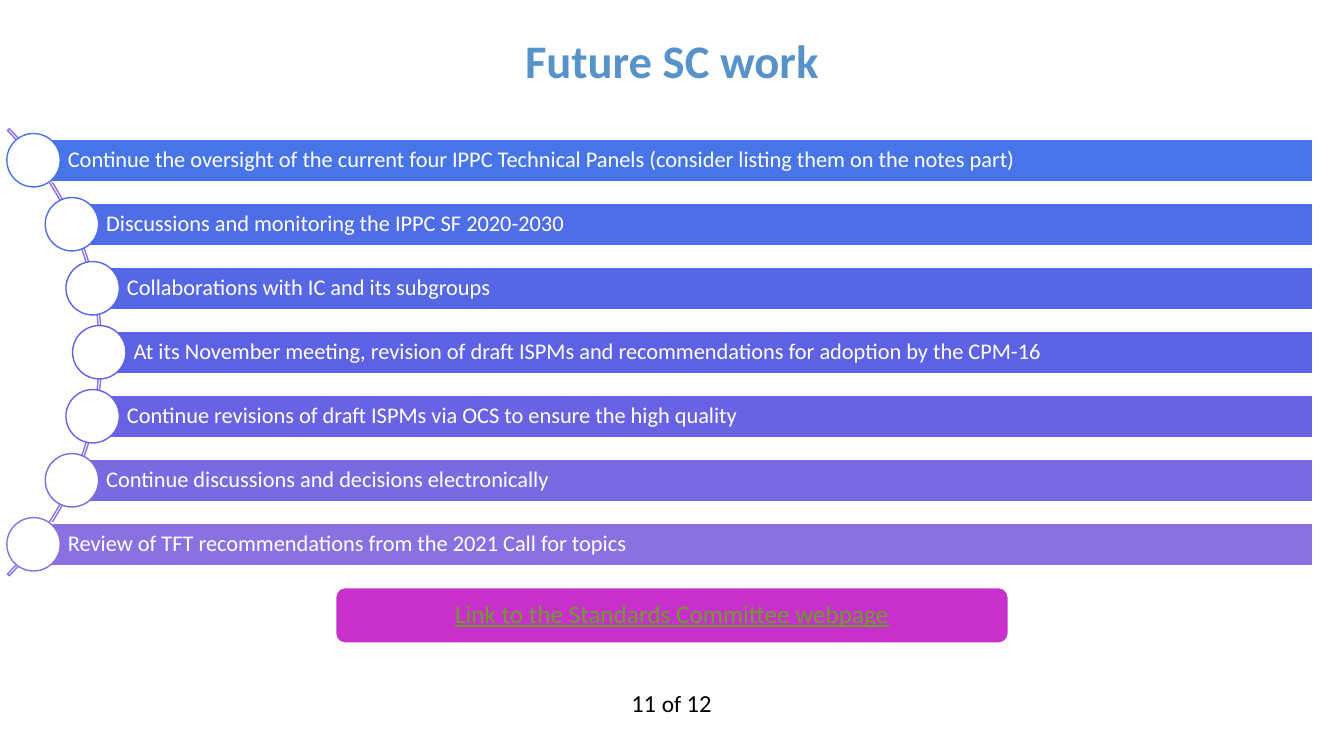
from math import sqrt

from pptx import Presentation
from pptx.dml.color import RGBColor
from pptx.enum.shapes import MSO_SHAPE
from pptx.enum.text import MSO_ANCHOR, PP_ALIGN
from pptx.util import Inches, Pt

RECT = MSO_SHAPE.RECTANGLE
ROUNDED = MSO_SHAPE.ROUNDED_RECTANGLE
OVAL = MSO_SHAPE.OVAL
BLOCK_ARC = MSO_SHAPE.BLOCK_ARC
MIDDLE = MSO_ANCHOR.MIDDLE
TOP = MSO_ANCHOR.TOP
LEFT = PP_ALIGN.LEFT
CENTER = PP_ALIGN.CENTER

SLIDE_WIDTH, SLIDE_HEIGHT = 13.33, 7.5
WHITE = "FFFFFF"
ARC_LEFT, ARC_TOP, ARC_SIZE = -5.26, 0.36, 6.27
MARKER_RADIUS = 3.11  # distance of the markers from the arc's centre
MARKER_SIZE = 0.53
BAR_HEIGHT, BAR_RIGHT = 0.42, 13.02
ROW_PITCH = 3.81 / 6

WORK_ITEMS = [
    ("Continue the oversight of the current four IPPC Technical Panels "
     "(consider listing them on the notes part)", "4775E7"),
    ("Discussions and monitoring the IPPC SF 2020-2030", "4E6DE6"),
    ("Collaborations with IC and its subgroups", "5567E5"),
    ("At its November meeting, revision of draft ISPMs and recommendations "
     "for adoption by the CPM-16", "5D61E3"),
    ("Continue revisions of draft ISPMs via OCS to ensure the high quality", "6963E3"),
    ("Continue discussions and decisions electronically", "7A6AE2"),
    ("Review of TFT recommendations from the 2021 Call for topics", "8971E1"),
]


def rgb(hex_color):
    return RGBColor.from_string(hex_color)


def write(frame, runs, color, align=CENTER, anchor=MIDDLE, margins=(0.1, 0.05, 0.1, 0.05),
          spacing=0.9, wrap=True, bold=False, underline=False):
    """Fill a text frame with one paragraph of (text, size) runs."""
    frame.word_wrap = wrap
    frame.vertical_anchor = anchor
    (frame.margin_left, frame.margin_top,
     frame.margin_right, frame.margin_bottom) = map(Inches, margins)
    paragraph = frame.paragraphs[0]
    paragraph.alignment = align
    paragraph.line_spacing = spacing
    for text, size in runs:
        run = paragraph.add_run()
        run.text = text
        run.font.name = "Calibri"
        run.font.size = Pt(size)
        run.font.bold = bold
        run.font.underline = underline
        run.font.color.rgb = rgb(color)


def add_text(slide, box, runs, color, **text_format):
    label = slide.shapes.add_textbox(*map(Inches, box))
    write(label.text_frame, runs, color, **text_format)


def add_figure(slide, preset, box, line, fill=None):
    figure = slide.shapes.add_shape(preset, *map(Inches, box))
    figure.shadow.inherit = False
    if fill:
        figure.fill.solid()
        figure.fill.fore_color.rgb = rgb(fill)
    else:
        figure.fill.background()
    figure.line.color.rgb = rgb(line)
    figure.line.width = Pt(1)
    return figure


def add_arc(slide):
    arc = add_figure(slide, BLOCK_ARC, (ARC_LEFT, ARC_TOP, ARC_SIZE, ARC_SIZE), "8971E1")
    for index, value in enumerate((189, 27, 0.004)):
        arc.adjustments[index] = value


def add_work_item(slide, row, text, color):
    """Add a bar and its marker, centred where the row meets the arc."""
    offset = (row - (len(WORK_ITEMS) - 1) / 2) * ROW_PITCH
    x = ARC_LEFT + ARC_SIZE / 2 + sqrt(MARKER_RADIUS ** 2 - offset ** 2)
    y = ARC_TOP + ARC_SIZE / 2 + offset
    bar = add_figure(slide, RECT, (x, y - BAR_HEIGHT / 2, BAR_RIGHT - x, BAR_HEIGHT),
                     WHITE, color)
    write(bar.text_frame, [(text, 16)], WHITE, align=LEFT, margins=(0.34, 0.04, 0.04, 0.04))
    add_figure(slide, OVAL, (x - MARKER_SIZE / 2, y - MARKER_SIZE / 2, MARKER_SIZE, MARKER_SIZE),
               color, WHITE)


def main():
    deck = Presentation()
    deck.slide_width = Inches(SLIDE_WIDTH)
    deck.slide_height = Inches(SLIDE_HEIGHT)
    slide = deck.slides.add_slide(deck.slide_layouts[6])

    add_text(slide, (0, 0, SLIDE_WIDTH, 1.25), [("Future SC work", 33.3)], "5792C9", bold=True)
    add_text(slide, (5.99, 6.75, 1.34, 0.46), [("11 ", 17.5), ("of", 16.7), (" 12", 17.5)],
             "000000", anchor=TOP, margins=(0.17, 0.08, 0.17, 0.08), spacing=1.0, wrap=False)

    add_arc(slide)
    for row, (text, color) in enumerate(WORK_ITEMS):
        add_work_item(slide, row, text, color)

    webpage_button = add_figure(slide, ROUNDED, (3.33, 5.83, 6.67, 0.55), WHITE, "C830CC")
    write(webpage_button.text_frame, [("Link to the Standards Committee webpage", 18)],
          "6B9F25", margins=(0.07, 0.07, 0.07, 0.07), underline=True)

    deck.save("out.pptx")


if __name__ == "__main__":
    main()
